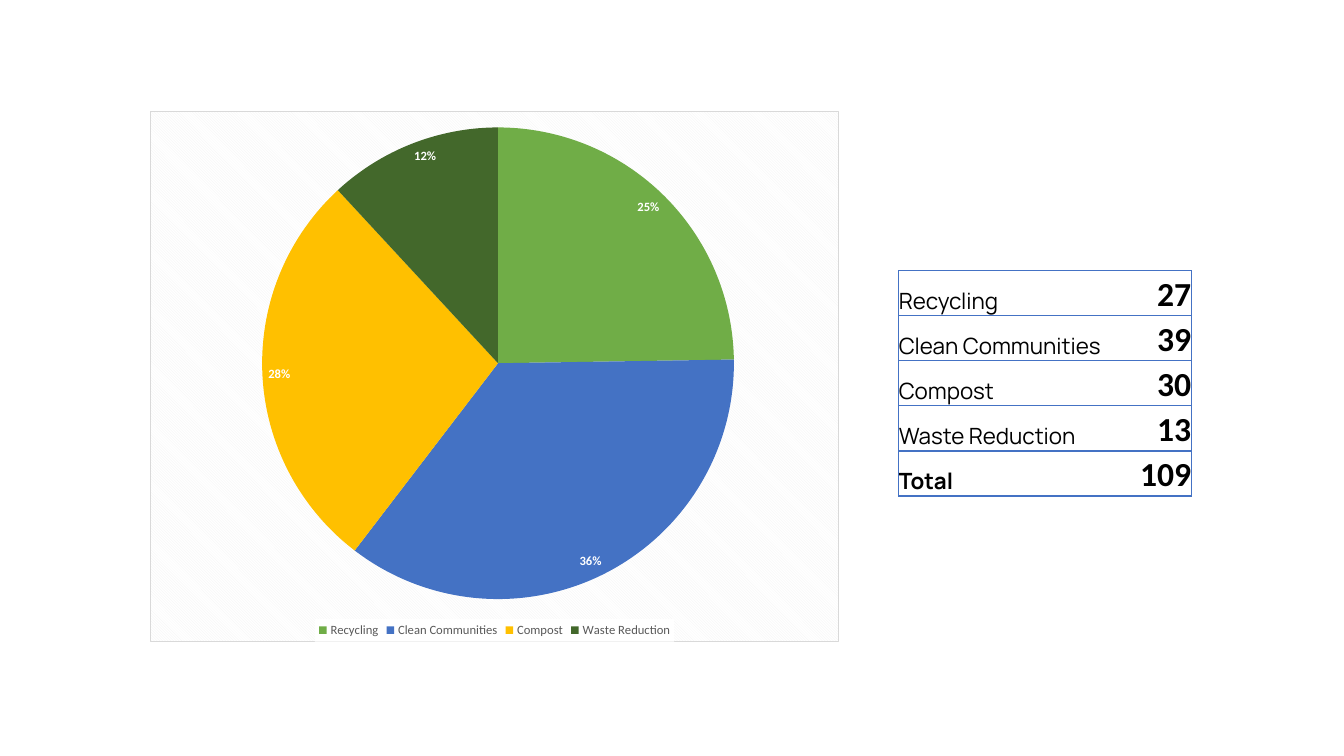
import pptx
import pptx.chart.data
import pptx.dml.color
import pptx.enum.chart
import pptx.enum.text
import pptx.oxml
import pptx.oxml.ns
import pptx.util
from pptx.dml.color import RGBColor
from pptx.util import Cm

WHITE = RGBColor(0xFF, 0xFF, 0xFF)
BLACK = RGBColor(0, 0, 0)
GREY_TEXT = RGBColor(0x59, 0x59, 0x59)
FRAME_GREY = RGBColor(0xD9, 0xD9, 0xD9)
HATCH_GREY = RGBColor(0xF2, 0xF2, 0xF2)
GREEN = RGBColor(0x70, 0xAD, 0x47)
BLUE = RGBColor(0x44, 0x72, 0xC4)
YELLOW = RGBColor(0xFF, 0xC0, 0x00)
DARK_GREEN = RGBColor(0x43, 0x68, 0x2B)

# Programme, count, share of the total in percent, slice colour
PROGRAMMES = [
    ("Recycling", 27, 25, GREEN),
    ("Clean Communities", 39, 36, BLUE),
    ("Compost", 30, 28, YELLOW),
    ("Waste Reduction", 13, 12, DARK_GREEN),
]
NAMESPACES = pptx.oxml.ns.nsdecls("c", "a")


def format_font(font, name, size, color, bold=False):
    font.name = name
    font.size = pptx.util.Pt(size)
    font.color.rgb = color
    font.bold = bold


def add_share_pie(slide, left, top, width, height):
    shares = pptx.chart.data.CategoryChartData()
    shares.categories = [name for name, _, _, _ in PROGRAMMES]
    shares.add_series("Series 1", [share for _, _, share, _ in PROGRAMMES])
    pie = slide.shapes.add_chart(
        pptx.enum.chart.XL_CHART_TYPE.PIE, left, top, width, height, shares).chart
    pie.has_title = False
    format_font(pie.font, "Calibri", 10, BLACK)

    # Slices and percentages
    plot = pie.plots[0]
    plot.vary_by_categories = True
    for index, (_, _, _, color) in enumerate(PROGRAMMES):
        fill = plot.series[0].points[index].format.fill
        fill.solid()
        fill.fore_color.rgb = color
    labels = plot.series[0].data_labels
    labels.show_percentage = True
    labels.show_value = False
    labels.number_format = "0%"
    labels.number_format_is_linked = False
    labels.position = pptx.enum.chart.XL_LABEL_POSITION.INSIDE_END
    format_font(labels.font, "Calibri", 9, WHITE, True)

    # Legend on a white strip
    pie.has_legend = True
    legend = pie.legend
    legend.position = pptx.enum.chart.XL_LEGEND_POSITION.BOTTOM
    legend.include_in_layout = False
    format_font(legend.font, "Calibri", 9, GREY_TEXT)
    legend._element.find(pptx.oxml.ns.qn("c:overlay")).addnext(pptx.oxml.parse_xml(
        f'<c:spPr {NAMESPACES}><a:solidFill><a:srgbClr val="{WHITE}"/></a:solidFill></c:spPr>'))

    # Place of the pie in its frame
    plot_area = pie._chartSpace.chart.plotArea
    for layout in plot_area.findall(pptx.oxml.ns.qn("c:layout")):
        plot_area.remove(layout)
    plot_area.insert(0, pptx.oxml.parse_xml(
        f'<c:layout {NAMESPACES}><c:manualLayout><c:layoutTarget val="inner"/>'
        '<c:xMode val="edge"/><c:yMode val="edge"/><c:x val="0.16"/><c:y val="0.03"/>'
        '<c:w val="0.69"/><c:h val="0.89"/></c:manualLayout></c:layout>'))

    # Hatched background and thin frame
    pie._chartSpace.chart.addnext(pptx.oxml.parse_xml(
        f'<c:spPr {NAMESPACES}><a:pattFill prst="dkDnDiag">'
        f'<a:fgClr><a:srgbClr val="{HATCH_GREY}"/></a:fgClr>'
        f'<a:bgClr><a:srgbClr val="{WHITE}"/></a:bgClr></a:pattFill>'
        f'<a:ln w="9525"><a:solidFill><a:srgbClr val="{FRAME_GREY}"/></a:solidFill></a:ln>'
        '</c:spPr>'))


def set_borders(cell, open_side):
    for side in ("lnL", "lnR", "lnT", "lnB"):
        stroke = ("<a:noFill/>" if side == open_side else
                  f'<a:solidFill><a:srgbClr val="{BLUE}"/></a:solidFill>')
        cell._tc.get_or_add_tcPr().append(pptx.oxml.parse_xml(
            f'<a:{side} {NAMESPACES} w="12700">{stroke}</a:{side}>'))


def format_cell(cell, text, open_side, alignment, font_name, size, bold):
    set_borders(cell, open_side)
    cell.fill.solid()
    cell.fill.fore_color.rgb = WHITE
    cell.margin_left = cell.margin_right = cell.margin_top = cell.margin_bottom = 0
    cell.vertical_anchor = pptx.enum.text.MSO_ANCHOR.BOTTOM
    cell.text_frame.text = text
    paragraph = cell.text_frame.paragraphs[0]
    paragraph.alignment = alignment
    format_font(paragraph.runs[0].font, font_name, size, BLACK, bold)


def add_count_table(slide, left, top, width, height):
    counts = [(name, count) for name, count, _, _ in PROGRAMMES]
    counts.append(("Total", sum(count for _, count in counts)))
    table = slide.shapes.add_table(len(counts), 2, left, top, width, height).table
    table.first_row = table.horz_banding = False
    table.columns[0].width = int(width * 0.73)
    table.columns[1].width = width - table.columns[0].width
    align = pptx.enum.text.PP_ALIGN
    for row, (name, count) in enumerate(counts):
        format_cell(table.cell(row, 0), name, "lnR", align.LEFT,
                    "Manrope", 16, name == "Total")
        format_cell(table.cell(row, 1), str(count), "lnL", align.RIGHT,
                    "Calibri", 24, True)


def main():
    presentation = pptx.Presentation()
    presentation.slide_width = Cm(33.87)
    presentation.slide_height = Cm(19.05)
    slide = presentation.slides.add_slide(presentation.slide_layouts[6])
    add_share_pie(slide, Cm(3.79), Cm(2.8), Cm(17.35), Cm(13.38))
    add_count_table(slide, Cm(22.65), Cm(6.82), Cm(7.37), Cm(5.68))
    presentation.save("out.pptx")


if __name__ == "__main__":
    main()
